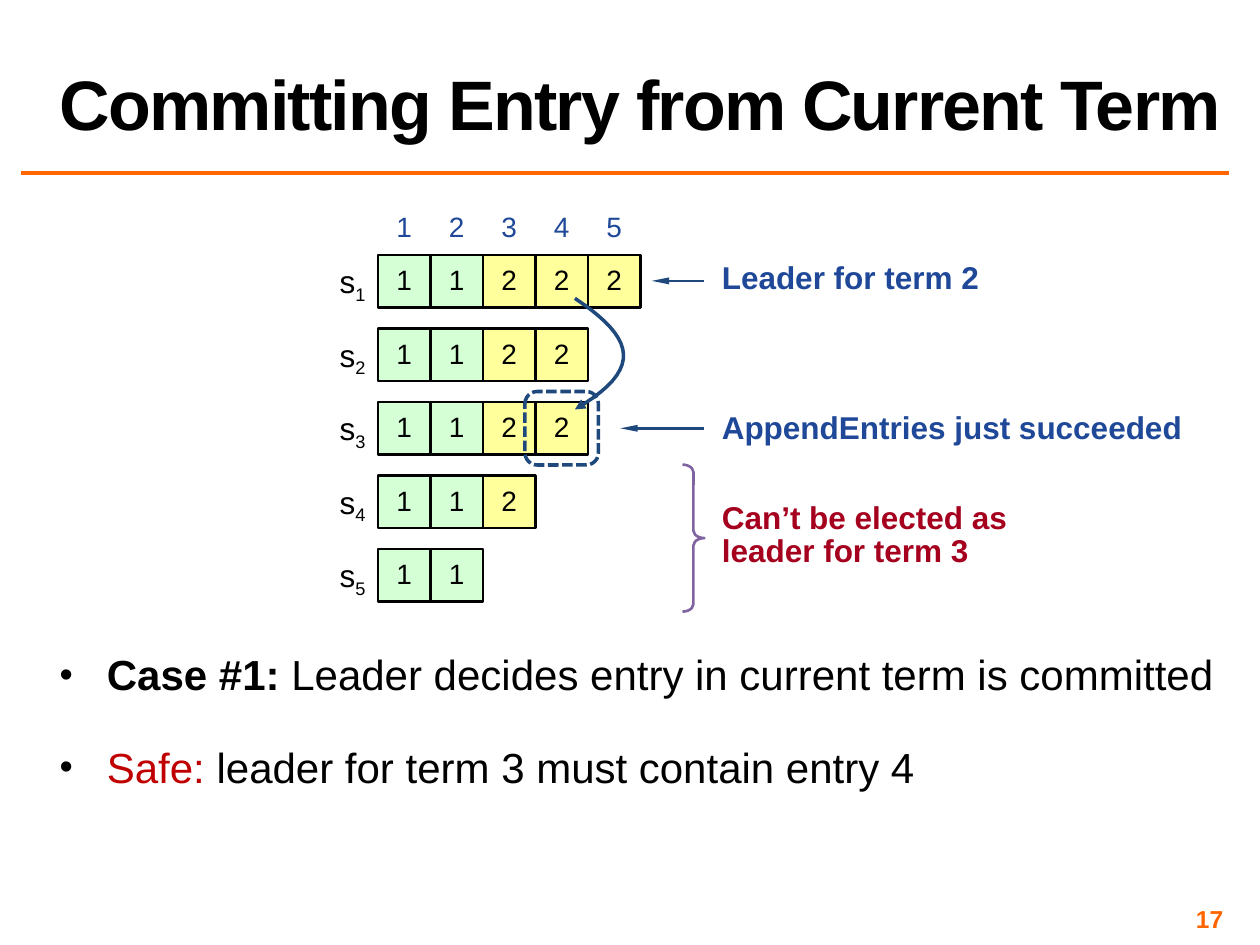
import pptx
import pptx.util
import pptx.dml.color
import pptx.enum.dml
import pptx.enum.shapes
import pptx.enum.text
import pptx.oxml
import pptx.oxml.ns
from lxml import etree

Pt = pptx.util.Pt
Shape = pptx.enum.shapes.MSO_SHAPE
ALIGN = {"left": pptx.enum.text.PP_ALIGN.LEFT, "center": pptx.enum.text.PP_ALIGN.CENTER,
         "right": pptx.enum.text.PP_ALIGN.RIGHT}
ANCHOR = {"top": pptx.enum.text.MSO_ANCHOR.TOP, "middle": pptx.enum.text.MSO_ANCHOR.MIDDLE,
          "bottom": pptx.enum.text.MSO_ANCHOR.BOTTOM}


def color(value):
    return pptx.dml.color.RGBColor.from_string(value)


def add_xml(parent, tag, **attributes):
    return etree.SubElement(parent, pptx.oxml.ns.qn(tag), attributes)


def write(para, text, size=18, fill="000000", bold=False, baseline=None, spacing=None):
    """Append formatted text to a paragraph; a newline becomes a line break."""
    for number, line in enumerate(text.split("\n")):
        if number:
            para.add_line_break()
        span = para.add_run()
        span.text = line
        font = span.font
        font.name, font.size, font.bold = "Arial", Pt(size), bold
        font.color.rgb = color(fill)
        properties = font._element
        if baseline is not None:
            properties.set("baseline", str(baseline * 1000))
        if spacing is not None:
            properties.set("spc", str(spacing * 100))


class Slide:
    BLUE, NAVY, RED, ORANGE = "1F4899", "1F497D", "A5001E", "FF6600"
    PURPLE, BLACK = "8064A2", "000000"
    TERM_FILLS = {1: "D5FFD5", 2: "FFFF9B"}

    def __init__(self, deck):
        self.page = deck.slides.add_slide(deck.slide_layouts[6])
        self.shapes = self.page.shapes

    def frame(self, shape, inset=0, anchor="top", align="left", leading=None):
        """Set up a text frame and return its first paragraph."""
        frame = shape.text_frame
        frame.word_wrap = True
        frame.vertical_anchor = ANCHOR[anchor]
        if inset is not None:
            frame.margin_left = frame.margin_right = Pt(inset)
            frame.margin_top = frame.margin_bottom = Pt(inset)
        para = frame.paragraphs[0]
        para.alignment = ALIGN[align]
        if leading:
            para.line_spacing = leading
        return para

    def text(self, left, top, width, height, **layout):
        box = self.shapes.add_textbox(Pt(left), Pt(top), Pt(width), Pt(height))
        return self.frame(box, **layout)

    def label(self, left, top, width, height, text, fill):
        para = self.text(left, top, width, height, leading=Pt(19))
        write(para, text, fill=fill, bold=True)

    def outline(self, shape, line, width, fill=None):
        shape.shadow.inherit = False
        if fill:
            shape.fill.solid()
            shape.fill.fore_color.rgb = color(fill)
        else:
            shape.fill.background()
        shape.line.color.rgb = color(line)
        shape.line.width = Pt(width)

    def shape(self, kind, left, top, width, height, line, weight, fill=None):
        shape = self.shapes.add_shape(kind, Pt(left), Pt(top), Pt(width), Pt(height))
        self.outline(shape, line, weight, fill)
        return shape

    def entry(self, left, top, size, term):
        cell = self.shape(Shape.RECTANGLE, left, top, size, size,
                          self.BLACK, 1.5, self.TERM_FILLS[term])
        para = self.frame(cell, anchor="middle", align="center", leading=Pt(17))
        write(para, str(term), size=16)

    def head(self, line, width="med", length="med"):
        add_xml(line._get_or_add_ln(), "a:tailEnd", type="triangle", w=width, len=length)

    def line(self, start, end, fill, width, arrow=False):
        line = self.shapes.add_connector(pptx.enum.shapes.MSO_CONNECTOR.STRAIGHT,
                                         *map(Pt, start + end))
        line.line.color.rgb = color(fill)
        line.line.width = Pt(width)
        if arrow:
            self.head(line.line, "sm", "lg")
        add_xml(line._element.spPr, "a:effectLst")

    def curve(self, points, fill, width, steps=20):
        """Draw a cubic curve through its four control points, with an arrowhead."""
        def at(t):
            weights = ((1 - t) ** 3, 3 * t * (1 - t) ** 2, 3 * t * t * (1 - t), t ** 3)
            return tuple(Pt(sum(w * point[axis] for w, point in zip(weights, points)))
                         for axis in (0, 1))

        builder = self.shapes.build_freeform(*at(0))
        builder.add_line_segments([at(step / steps) for step in range(1, steps + 1)],
                                  close=False)
        shape = builder.convert_to_shape()
        self.outline(shape, fill, width)
        self.head(shape.line)

    def bullet(self, para, before):
        para.space_before = Pt(before)
        properties = para._p.get_or_add_pPr()
        properties.set("marL", str(Pt(27)))
        properties.set("indent", str(Pt(-27)))
        add_xml(add_xml(properties, "a:buClr"), "a:srgbClr", val=self.BLACK)
        add_xml(properties, "a:buSzPct", val="90000")
        add_xml(properties, "a:buFont", typeface="Arial")
        add_xml(properties, "a:buChar", char="•")


def main():
    deck = pptx.Presentation()
    deck.slide_width, deck.slide_height = Pt(720), Pt(540)
    slide = Slide(deck)

    # Rule, page number and title
    slide.line((12, 98.9), (702, 98.9), slide.ORANGE, 2)
    para = slide.text(534, 516.5, 168, 16.5, inset=3, anchor="middle", align="right")
    write(para, "17", size=14, fill=slide.ORANGE, bold=True)
    para = slide.text(27, 1.5, 693, 84, inset=None, anchor="bottom", leading=0.8)
    write(para, "Committing Entry from Current Term", size=40, bold=True, spacing=-1)

    # Log grid: one row per server, one column per entry
    left, top, size, pitch = 216, 145.75, 30, 42
    logs = [(1, 1, 2, 2, 2), (1, 1, 2, 2), (1, 1, 2, 2), (1, 1, 2), (1, 1)]
    for column in range(len(logs[0])):
        para = slide.text(left + column * size, 116, size, 26.5, inset=None, align="center")
        write(para, str(column + 1), size=16, fill=slide.BLUE)
    for row, terms in enumerate(logs):
        y = top + row * pitch
        para = slide.text(186.5, y + 4, size, 21.5, align="center")
        write(para, "s")
        write(para, str(row + 1), baseline=-25)
        for column, term in enumerate(terms):
            slide.entry(left + column * size, y, size, term)

    # Servers that cannot lead
    slide.label(412.5, 287.25, 199.5, 38, "Can’t be elected as\nleader for term 3", slide.RED)
    brace = slide.shape(Shape.RIGHT_BRACE, 390, 265.5, 12.5, 84, slide.PURPLE, 1.5)
    brace.adjustments[0], brace.adjustments[1] = 0.34, 0.5

    # Replicated entry
    mark = slide.shape(Shape.ROUNDED_RECTANGLE, 300, 223.75, 42, 42, slide.NAVY, 2)
    mark.line.dash_style = pptx.enum.dml.MSO_LINE.SQUARE_DOT
    slide.label(412.5, 235.5, 301.5, 19.5, "AppendEntries just succeeded", slide.BLUE)
    slide.line((402.5, 244.75), (354.5, 244.75), slide.NAVY, 1.5, arrow=True)
    slide.curve([(328.5, 170.5), (363, 193.5), (368, 211), (328.5, 234)], slide.NAVY, 2)

    # Current leader
    slide.label(412.5, 150, 199.5, 19.5, "Leader for term 2", slide.BLUE)
    slide.line((402.5, 160.5), (372.5, 160.5), slide.NAVY, 1.5, arrow=True)

    # Conclusions
    first = slide.text(27, 367.25, 693, 150.5, inset=None)
    slide.bullet(first, before=12)
    write(first, "Case #1: ", size=24, bold=True)
    write(first, "Leader decides entry in current term is committed", size=24)
    second = slide.shapes[-1].text_frame.add_paragraph()
    slide.bullet(second, before=24)
    write(second, "Safe: ", size=24, fill="C00000")
    write(second, "leader for term 3 must contain entry 4", size=24)

    deck.save("out.pptx")


if __name__ == "__main__":
    main()
